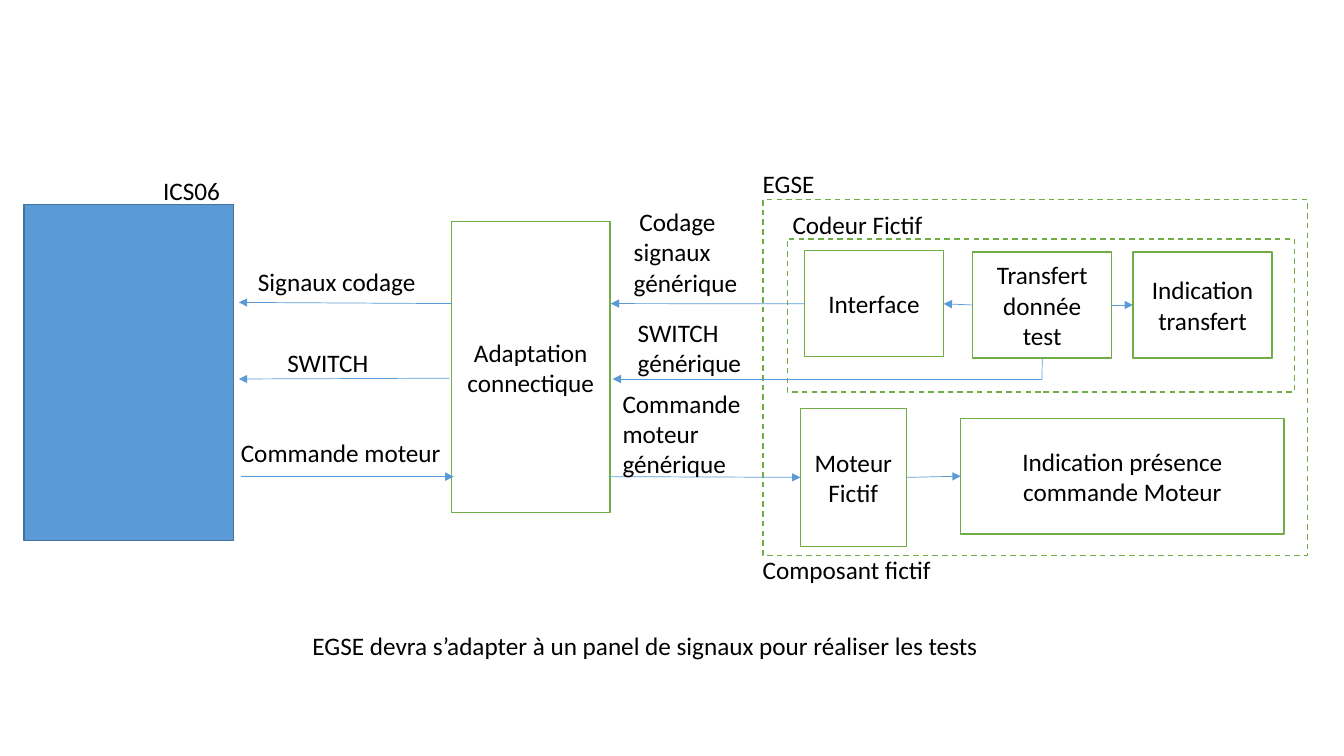
from dataclasses import dataclass

from lxml.etree import SubElement
from pptx import Presentation
from pptx.dml.color import RGBColor as Rgb
from pptx.enum.dml import MSO_LINE as Dash
from pptx.enum.shapes import MSO_CONNECTOR as Link, MSO_SHAPE as Preset
from pptx.enum.text import MSO_ANCHOR as Anchor, MSO_AUTO_SIZE as Fit, PP_ALIGN as Align
from pptx.oxml.ns import qn
from pptx.util import Cm, Pt

TOP, LEFT, BOTTOM, RIGHT = range(4)


@dataclass(frozen=True)
class Theme:
    """Colours, font and sizes of the diagram."""
    font: str = "Calibri"
    text_size: float = 18
    border: float = 1
    arrow: float = 0.5
    ink: Rgb = Rgb.from_string("000000")
    blue: Rgb = Rgb.from_string("5B9BD5")
    navy: Rgb = Rgb.from_string("43739E")
    green: Rgb = Rgb.from_string("70AD47")


class Diagram:
    """Draws boxes, labels and arrows on one page in a shared style."""

    def __init__(self, page, theme):
        """Keep the page and its theme."""
        self.page, self.theme = page, theme

    def set_text(self, frame, text, align):
        """Fill a text frame, one paragraph per line."""
        frame.text = text
        for para in frame.paragraphs:
            para.alignment = align
            para.font.name = self.theme.font
            para.font.size = Pt(self.theme.text_size)
            para.font.color.rgb = self.theme.ink

    def box(self, left, top, width, height, text="", fill=None, line=None, dashed=False):
        """Add a bordered rectangle with optional centred text."""
        box = self.page.shapes.add_shape(
            Preset.RECTANGLE, Cm(left), Cm(top), Cm(width), Cm(height))
        box.shadow.inherit = False
        if fill is None:
            box.fill.background()
        else:
            box.fill.solid()
            box.fill.fore_color.rgb = fill
        box.line.color.rgb = line or self.theme.green
        box.line.width = Pt(self.theme.border)
        if dashed:
            box.line.dash_style = Dash.DASH
        if text:
            box.text_frame.vertical_anchor = Anchor.MIDDLE
            self.set_text(box.text_frame, text, Align.CENTER)
        return box

    def label(self, left, top, width, height, text, wrap=False, align=Align.LEFT):
        """Add a free text label."""
        label = self.page.shapes.add_textbox(Cm(left), Cm(top), Cm(width), Cm(height))
        label.text_frame.word_wrap = wrap
        label.text_frame.auto_size = Fit.SHAPE_TO_FIT_TEXT
        self.set_text(label.text_frame, text, align)

    def arrow(self, start, end, head=True):
        """Link two ends, each a point in cm or a (box, side) pair."""
        link = self.page.shapes.add_connector(
            Link.STRAIGHT, *self.point(start), *self.point(end))
        link.line.color.rgb = self.theme.blue
        link.line.width = Pt(self.theme.arrow)
        if head:
            outline = link._element.spPr.find(qn("a:ln"))
            SubElement(outline, qn("a:tailEnd"), type="triangle")
        SubElement(link._element.spPr, qn("a:effectLst"))
        for place, join in ((start, link.begin_connect), (end, link.end_connect)):
            if self.is_joined(place):
                join(*place)

    def is_joined(self, place):
        """Tell whether an end sits on a box."""
        return not isinstance(place[0], (int, float))

    def point(self, place):
        """Give the position of an end; joined ends move into place later."""
        if self.is_joined(place):
            return place[0].left, place[0].top
        return Cm(place[0]), Cm(place[1])


def main():
    """Build the test bench diagram."""
    deck = Presentation()
    deck.slide_width, deck.slide_height = Cm(33.87), Cm(19.05)
    theme = Theme()
    diagram = Diagram(deck.slides.add_slide(deck.slide_layouts[6]), theme)
    box, label, arrow = diagram.box, diagram.label, diagram.arrow

    box(0.61, 5.16, 5.28, 8.46, fill=theme.blue, line=theme.navy)
    box(19.84, 6.02, 12.78, 3.86, dashed=True)
    box(19.23, 5.03, 13.72, 8.97, dashed=True)
    box(11.38, 5.59, 3.99, 7.32, "Adaptation connectique")
    interface = box(20.27, 6.32, 3.51, 2.67, "Interface")
    transfer = box(24.51, 6.35, 3.51, 2.67, "Transfert donnée test")
    indication = box(28.55, 6.35, 3.51, 2.67, "Indication transfert")
    motor = box(20.17, 10.29, 2.67, 3.48, "Moteur Fictif")
    presence = box(24.21, 10.54, 8.15, 2.92, "Indication présence commande Moteur")

    switch_corner = (26.26, 9.55)
    arrow((11.38, 7.65), (6.02, 7.62))
    arrow((11.33, 9.53), (6.02, 9.55))
    arrow((6.07, 12.01), (11.43, 12.01))
    arrow((interface, LEFT), (15.39, 7.65))
    arrow((transfer, LEFT), (interface, RIGHT))
    arrow((transfer, RIGHT), (indication, LEFT))
    arrow((transfer, BOTTOM), switch_corner, head=False)
    arrow(switch_corner, (15.44, 9.55))
    arrow((15.34, 12.01), (motor, LEFT))
    arrow((motor, RIGHT), (presence, LEFT))

    label(3.86, 4.29, 1.96, 1.02, "ICS06")
    label(6.25, 6.58, 4.52, 1.02, "Signaux codage")
    label(6.99, 8.64, 2.57, 1.02, "SWITCH")
    label(5.82, 10.9, 5.61, 1.02, "Commande moteur")
    label(15.72, 5.08, 3.89, 2.57, " Codage signaux générique", wrap=True)
    label(15.82, 7.87, 3.3, 1.8, "SWITCH\ngénérique")
    label(15.44, 9.65, 4.29, 2.57, "Commande moteur générique", wrap=True)
    label(18.97, 4.11, 1.83, 1.02, "EGSE")
    label(19.69, 5.16, 3.84, 1.02, "Codeur Fictif", align=Align.CENTER)
    label(18.97, 13.84, 4.8, 1.02, "Composant fictif")
    label(6.43, 15.77, 19.66, 1.02,
          "EGSE devra s’adapter à un panel de signaux pour réaliser les tests",
          wrap=True, align=Align.CENTER)
    deck.save("out.pptx")


if __name__ == "__main__":
    main()
